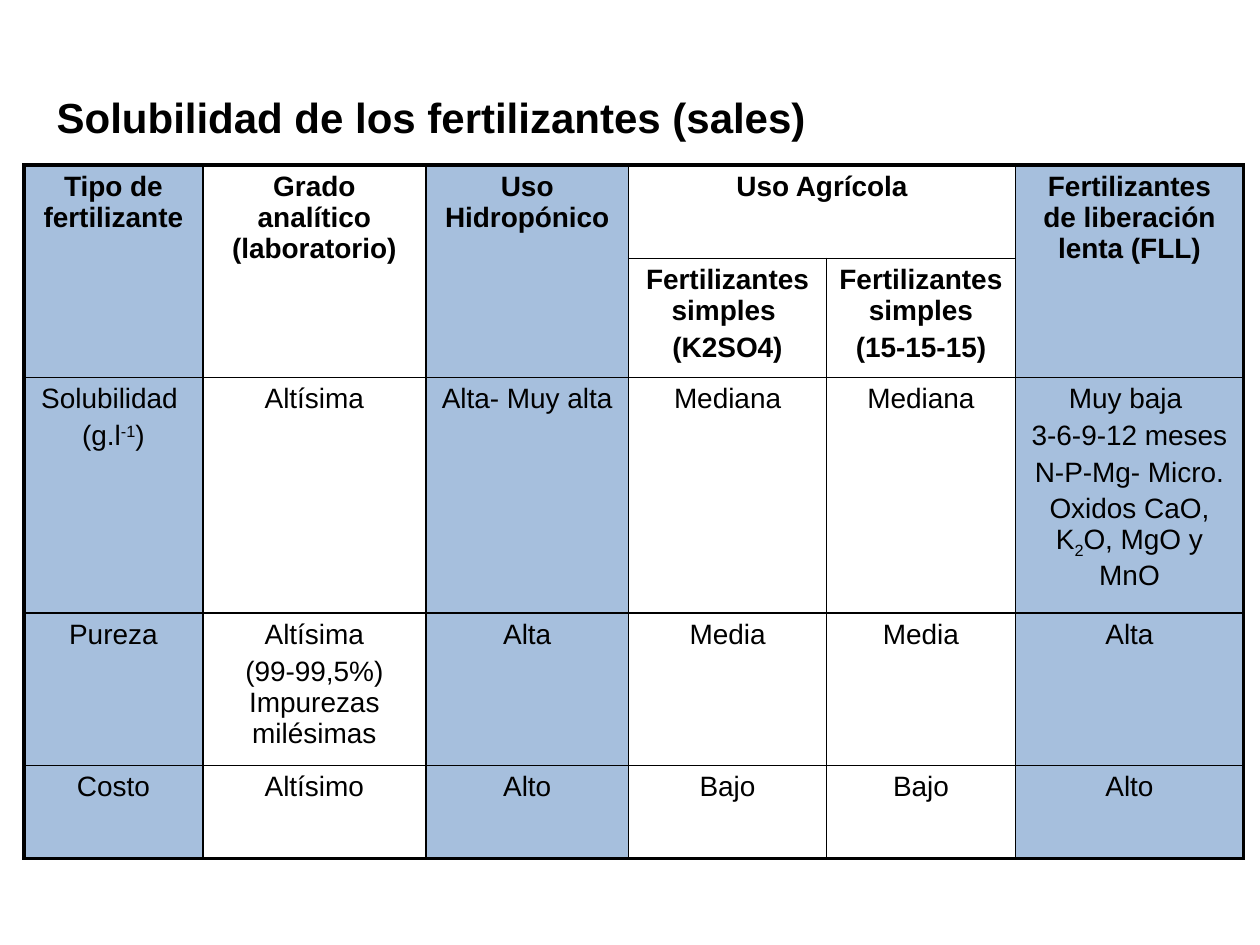
from lxml.etree import SubElement
from pptx import Presentation
from pptx.dml.color import RGBColor
from pptx.enum.text import MSO_ANCHOR, MSO_AUTO_SIZE, PP_ALIGN
from pptx.oxml import parse_xml
from pptx.oxml.ns import nsdecls, qn
from pptx.util import Inches, Pt

BLACK = RGBColor(0x00, 0x00, 0x00)
WHITE = RGBColor(0xFF, 0xFF, 0xFF)
BLUE = RGBColor(0x4F, 0x81, 0xBD)
THIN, THICK = Pt(1), Pt(2.25)
COLUMN_WIDTHS = [1.42, 1.77, 1.61, 1.57, 1.5, 1.81]
ROW_HEIGHT = 0.74
BLUE_COLUMNS = {0, 2, 5}
HEADER_ROWS = 2
BASELINES = {"-1": "30000", "2": "-25000"}

ROWS = [
    ["Tipo de fertilizante", "Grado analítico (laboratorio)", "Uso Hidropónico",
     "Uso Agrícola", "", "Fertilizantes de liberación lenta (FLL)"],
    ["", "", "", "Fertilizantes simples \n(K2SO4)",
     "Fertilizantes simples\n(15-15-15)", ""],
    ["Solubilidad \n(g.l|-1|)", "Altísima", "Alta- Muy alta", "Mediana", "Mediana",
     "Muy baja \n3-6-9-12 meses\nN-P-Mg- Micro.\nOxidos CaO, K|2|O, MgO y MnO"],
    ["Pureza", "Altísima\n(99-99,5%) Impurezas milésimas", "Alta", "Media", "Media",
     "Alta"],
    ["Costo", "Altísimo", "Alto", "Bajo", "Bajo", "Alto"],
]
MERGES = [(0, 0, 1, 0), (0, 1, 1, 1), (0, 2, 1, 2), (0, 3, 0, 4), (0, 5, 1, 5)]


def format_font(font, size, bold):
    font.name = "Arial"
    font.size = Pt(size)
    font.bold = bold
    font.color.rgb = BLACK


def set_borders(cell, widths):
    properties = cell._tc.get_or_add_tcPr()
    for position, (side, width) in enumerate(widths.items()):
        line = parse_xml(
            f'<a:ln{side} {nsdecls("a")} w="{width}"><a:solidFill>'
            f'<a:srgbClr val="{BLACK}"/></a:solidFill></a:ln{side}>')
        properties.insert(position, line)


presentation = Presentation()
presentation.slide_width = Inches(10)
presentation.slide_height = Inches(7.5)
slide = presentation.slides.add_slide(presentation.slide_layouts[5])

title = slide.shapes.title
title.left, title.top = Inches(0.35), Inches(0.68)
title.width, title.height = Inches(9.65), Inches(0.5)
title.text_frame.text = "Solubilidad de los fertilizantes (sales)"
title.text_frame.auto_size = MSO_AUTO_SIZE.SHAPE_TO_FIT_TEXT
title.text_frame.vertical_anchor = MSO_ANCHOR.TOP
title_paragraph = title.text_frame.paragraphs[0]
title_paragraph.alignment = PP_ALIGN.LEFT
title_paragraph.space_before = Pt(12)
format_font(title_paragraph.runs[0].font, 24, True)

table = slide.shapes.add_table(
    len(ROWS), len(COLUMN_WIDTHS), Inches(0.19), Inches(1.31),
    Inches(sum(COLUMN_WIDTHS)), Inches(ROW_HEIGHT * len(ROWS))).table
table.first_row = False
table.horz_banding = False
for column, width in zip(table.columns, COLUMN_WIDTHS):
    column.width = Inches(width)
for row in table.rows:
    row.height = Inches(ROW_HEIGHT)

last_row, last_column = len(ROWS) - 1, len(COLUMN_WIDTHS) - 1
for row_index, texts in enumerate(ROWS):
    for column_index, text in enumerate(texts):
        cell = table.cell(row_index, column_index)
        cell.fill.solid()
        if column_index in BLUE_COLUMNS:
            cell.fill.fore_color.rgb = BLUE
            color = cell._tc.tcPr.find(".//" + qn("a:srgbClr"))
            SubElement(color, qn("a:alpha"), val="50000")
        else:
            cell.fill.fore_color.rgb = WHITE
        set_borders(cell, {
            "L": THICK if column_index == 0 else THIN,
            "R": THICK if column_index == last_column else THIN,
            "T": THICK if row_index == 0 else THIN,
            "B": THICK if row_index == last_row else THIN,
        })
        if not text:
            continue
        cell.text_frame.text = text.replace("|", "")
        for paragraph, line in zip(cell.text_frame.paragraphs, text.split("\n")):
            paragraph.alignment = PP_ALIGN.CENTER
            paragraph.space_before = Pt(3.2)
            paragraph.text = ""
            for part in line.split("|"):
                run = paragraph.add_run()
                run.text = part
                format_font(run.font, 16, row_index < HEADER_ROWS)
                if part in BASELINES:
                    run._r.get_or_add_rPr().set("baseline", BASELINES[part])

for top, left, bottom, right in MERGES:
    table.cell(top, left).merge(table.cell(bottom, right))

presentation.save("out.pptx")
